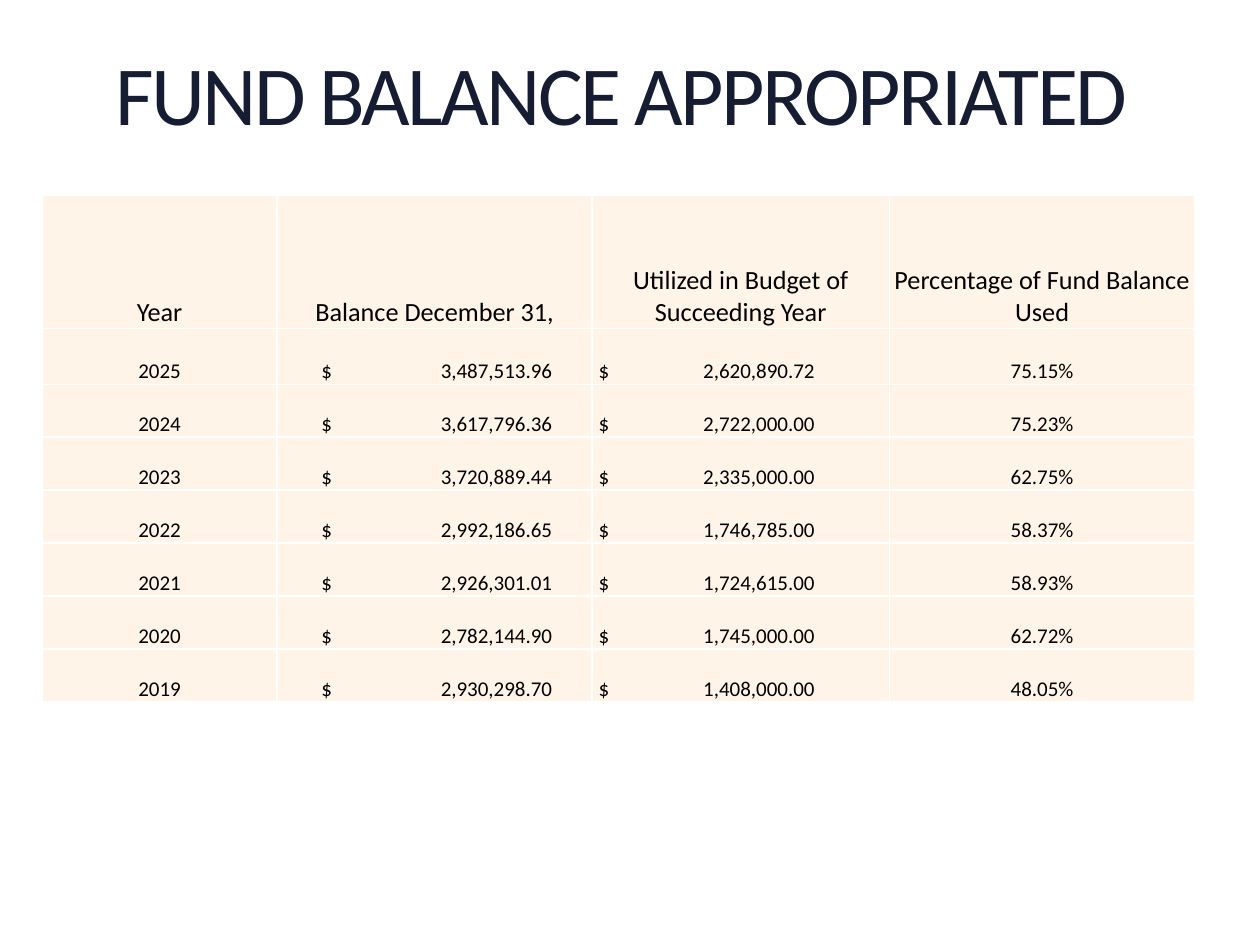
import dataclasses

import pptx
import pptx.dml.color
import pptx.enum.text
import pptx.oxml
import pptx.oxml.ns
import pptx.util

ALIGN = pptx.enum.text.PP_ALIGN
ANCHOR = pptx.enum.text.MSO_ANCHOR
UNIT = pptx.util.Inches(1) / 12  # the slide is a grid of 120 columns by 90 rows


@dataclasses.dataclass(frozen=True)
class Theme:
    font: str = "Calibri"
    title_color: str = "161D32"
    text_color: str = "000000"
    cell_fill: str = "FFF4E7"
    border: str = "FFFFFF"
    title_size: int = 48
    header_size: int = 15
    body_size: int = 12
    title_spacing: float = -1.5
    border_width: int = 1


THEME = Theme()
TITLE_BOX = (11, 5, 110, 8.75)
TABLE_BOX = (4, 18.6, 109.8, 48.3)
COLUMNS = (22.4, 30, 28.3, 29.1)
ROWS = (12.7, 5.3) + (5.05,) * 6
# Per money column: left inset and right tab stop, in grid units
MONEY_COLUMNS = {1: (4.2, 22), 2: (0.6, 20.6)}

HEADER = ("Year", "Balance December 31,", "Utilized in Budget of Succeeding Year",
          "Percentage of Fund Balance Used")
BALANCES = (
    ("2025", "3,487,513.96", "2,620,890.72", "75.15%"),
    ("2024", "3,617,796.36", "2,722,000.00", "75.23%"),
    ("2023", "3,720,889.44", "2,335,000.00", "62.75%"),
    ("2022", "2,992,186.65", "1,746,785.00", "58.37%"),
    ("2021", "2,926,301.01", "1,724,615.00", "58.93%"),
    ("2020", "2,782,144.90", "1,745,000.00", "62.72%"),
    ("2019", "2,930,298.70", "1,408,000.00", "48.05%"),
)


def grid(value):
    return pptx.util.Emu(round(value * UNIT))


def rgb(color):
    return pptx.dml.color.RGBColor.from_string(color)


def add_run(p, text, size, color):
    r = p.add_run()
    r.text = text
    r.font.name = THEME.font
    r.font.size = pptx.util.Pt(size)
    r.font.color.rgb = rgb(color)
    return r


def add_title(s, box, text):
    tf = s.shapes.add_textbox(*map(grid, box)).text_frame
    tf.word_wrap = True
    tf.margin_left = tf.margin_right = tf.margin_top = tf.margin_bottom = 0
    p = tf.paragraphs[0]
    p.line_spacing = 0.9
    r = add_run(p, text, THEME.title_size, THEME.title_color)
    r.font._element.set("spc", str(int(THEME.title_spacing * 100)))


def add_borders(cell):
    """Draw all four sides; borders must come before the cell's fill."""
    tc_pr = cell._tc.get_or_add_tcPr()
    width = pptx.util.Pt(THEME.border_width)
    for side in ("lnL", "lnR", "lnT", "lnB"):
        tc_pr.append(pptx.oxml.parse_xml(
            f'<a:{side} {pptx.oxml.ns.nsdecls("a")} w="{width}"><a:solidFill>'
            f'<a:srgbClr val="{THEME.border}"/></a:solidFill></a:{side}>'))


def add_right_tab(p, position):
    p._p.get_or_add_pPr().append(pptx.oxml.parse_xml(
        f'<a:tabLst {pptx.oxml.ns.nsdecls("a")}>'
        f'<a:tab pos="{position}" algn="r"/></a:tabLst>'))


def fill_cell(cell, text, size, money=None):
    """Write one cell; money gives the inset and tab stop of a dollar amount."""
    add_borders(cell)
    cell.fill.solid()
    cell.fill.fore_color.rgb = rgb(THEME.cell_fill)
    cell.vertical_anchor = ANCHOR.BOTTOM
    cell.margin_left = cell.margin_right = cell.margin_top = grid(0.1)
    cell.margin_bottom = 0
    p = cell.text_frame.paragraphs[0]
    if money:
        inset, tab = money
        cell.margin_left = grid(inset)
        p.alignment = ALIGN.LEFT
        add_right_tab(p, grid(tab))
        text = f"$\t{text}"
    else:
        p.alignment = ALIGN.CENTER
    add_run(p, text, size, THEME.text_color)


def add_balance_table(s, box):
    table = s.shapes.add_table(len(ROWS), len(COLUMNS), *map(grid, box)).table
    for column, width in zip(table.columns, COLUMNS):
        column.width = grid(width)
    for row, height in zip(table.rows, ROWS):
        row.height = grid(height)
    for i, text in enumerate(HEADER):
        fill_cell(table.cell(0, i), text, THEME.header_size)
    for j, values in enumerate(BALANCES, start=1):
        for i, text in enumerate(values):
            fill_cell(table.cell(j, i), text, THEME.body_size, MONEY_COLUMNS.get(i))


def main():
    prs = pptx.Presentation()
    prs.slide_width, prs.slide_height = grid(120), grid(90)
    s = prs.slides.add_slide(prs.slide_layouts[6])
    add_title(s, TITLE_BOX, "FUND BALANCE APPROPRIATED")
    add_balance_table(s, TABLE_BOX)
    prs.save("out.pptx")


if __name__ == "__main__":
    main()
